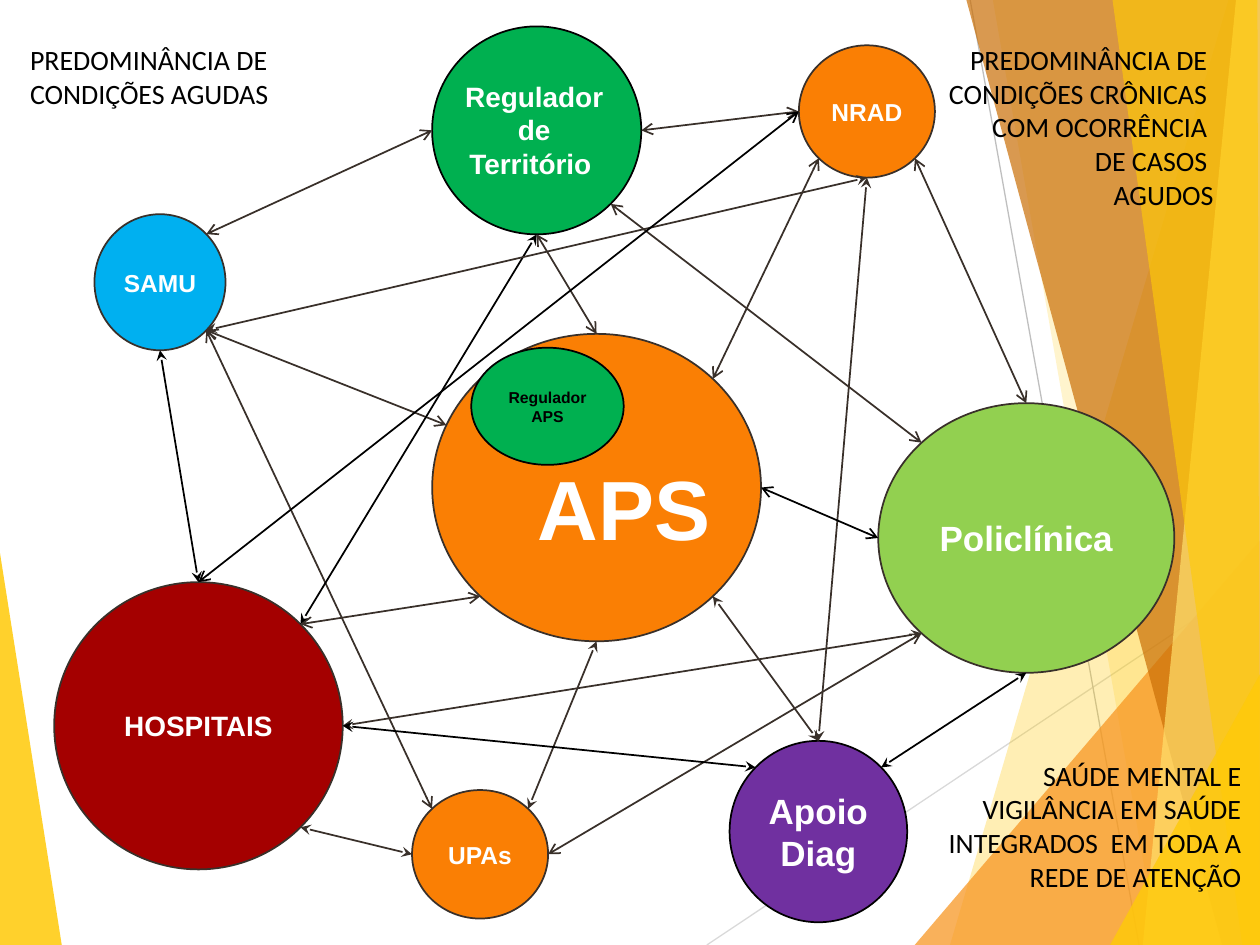
import math

import pptx
import pptx.dml.color
import pptx.enum.shapes
import pptx.enum.text
import pptx.oxml.ns
import pptx.util
from lxml import etree

SCALE = 9144
WIDTH, HEIGHT = 1000, 750
DARK, BLACK, WHITE = "39302A", "000000", "FFFFFF"
ORANGE, GREEN, GOLD = "FA7F04", "00B050", "FFCA08"
ALIGN = pptx.enum.text.PP_ALIGN
ANCHOR = pptx.enum.text.MSO_ANCHOR

SITES = {"E": 0, "SE": 45, "S": 90, "SW": 135, "W": 180, "WNW": 204, "NW": 225, "N": 270, "NE": 315}

LEFT_BAND = ([(0, 439), (49, 750), (0, 750)], GOLD, 85)
RIGHT_BANDS = [
    ([(975, 0), (754, 750), (1000, 750), (1000, 0)], GOLD, 30),
    ([(788, 0), (919, 750), (1000, 750), (1000, 0)], GOLD, 20),
    ([(726, 750), (1000, 429), (1000, 750)], "F8931D", 72),
    ([(767, 0), (970, 750), (1000, 750), (1000, 0)], "CA6F06", 70),
    ([(981, 0), (907, 750), (1000, 750), (1000, 0)], "FFDF6B", 70),
    ([(883, 0), (986, 750), (1000, 750), (998, 0)], GOLD, 65),
    ([(881, 750), (1000, 535), (1000, 750)], GOLD, 80),
]

NODES = {
    "SAMU": ((75, 170, 104, 108), "00B0F0", DARK, "SAMU", 14),
    "Território": ((343, 21, 166, 165), GREEN, BLACK, "", 16),
    "UPAs": ((327, 627, 108, 102), ORANGE, DARK, "UPAs", 14),
    "Hospitais": ((43, 462, 229, 228), "A40000", DARK, "HOSPITAIS", 16),
    "Apoio": ((579, 588, 141, 144), "7030A0", BLACK, "Apoio Diag", 20),
    "Policlínica": ((697, 320, 235, 214), "92D050", DARK, "Policlínica", 20),
    "NRAD": ((634, 36, 108, 105), ORANGE, DARK, "NRAD", 14),
    "APS": ((343, 265, 261, 244), ORANGE, DARK, "", 48),
}

LINKS = [
    ("UPAs", "NW", "SAMU", "SE", DARK, "arrow"),
    ("SAMU", "SE", "APS", "WNW", DARK, "arrow"),
    ("APS", "N", "Território", "S", DARK, "arrow"),
    ("Território", "E", "NRAD", "W", DARK, "arrow"),
    ("NRAD", "SW", "APS", "NE", DARK, "arrow"),
    ("NRAD", "SE", "Policlínica", "N", DARK, "arrow"),
    ("Território", "W", "SAMU", "NE", DARK, "arrow"),
    ("Território", "SE", "Policlínica", "NW", DARK, "arrow"),
    ("NRAD", "S", "Apoio", "N", DARK, "stealth"),
    ("APS", "S", "UPAs", "NE", DARK, "stealth"),
    ("Hospitais", "SE", "UPAs", "W", DARK, "stealth"),
    ("Hospitais", "E", "Policlínica", "SW", DARK, "stealth"),
    ("UPAs", "E", "Policlínica", "SW", DARK, "arrow"),
    ("Território", "S", "Hospitais", "NE", BLACK, "stealth"),
    ("SAMU", "S", "Hospitais", "N", BLACK, "stealth"),
    ("Hospitais", "NE", "APS", "SW", DARK, "arrow"),
    ("APS", "SE", "Apoio", "N", DARK, "stealth"),
    ("APS", "E", "Policlínica", "W", BLACK, "arrow"),
    ("NRAD", "S", "SAMU", "SE", DARK, "stealth"),
    ("NRAD", "W", "Hospitais", "N", BLACK, "arrow"),
    ("Hospitais", "E", "Apoio", "NW", BLACK, "stealth"),
    ("Policlínica", "S", "Apoio", "NE", BLACK, "stealth"),
]


def px(*lengths):
    """Turn lengths in px into EMU."""
    return [pptx.util.Emu(round(length * SCALE)) for length in lengths]


def color(hex_text):
    """Return the colour for a hex string."""
    return pptx.dml.color.RGBColor.from_string(hex_text)


def paint(shape, fill, line=None, opacity=100):
    """Set fill, opacity and outline of a shape and drop its shadow."""
    shape.shadow.inherit = False
    shape.fill.solid()
    shape.fill.fore_color.rgb = color(fill)
    if opacity < 100:
        tint = shape.fill._xPr.find(".//" + pptx.oxml.ns.qn("a:srgbClr"))
        etree.SubElement(tint, pptx.oxml.ns.qn("a:alpha"), val=str(opacity * 1000))
    if line:
        shape.line.color.rgb = color(line)
        shape.line.width = pptx.util.Pt(1)
    else:
        shape.line.fill.background()


def write(shape, text, size=16, font="Arial", ink=WHITE, bold=True, align=ALIGN.CENTER,
          anchor=ANCHOR.MIDDLE, insets=(7, 4), wrap=True):
    """Fill a shape with formatted paragraphs, one for each line of text."""
    frame = shape.text_frame
    frame.word_wrap = wrap
    frame.vertical_anchor = anchor
    frame.margin_left, frame.margin_top = frame.margin_right, frame.margin_bottom = px(*insets)
    frame.text = text
    for paragraph in frame.paragraphs:
        paragraph.alignment = align
        for run in paragraph.runs:
            run.font.size = pptx.util.Pt(size)
            run.font.name = font
            run.font.bold = bold
            run.font.color.rgb = color(ink)


def add_label(shapes, box, text, **text_format):
    """Place a text box that starts at its top."""
    label = shapes.add_textbox(*px(*box))
    write(label, text, anchor=ANCHOR.TOP, **text_format)
    return label


def add_caption(shapes, box, text, **text_format):
    """Place a plain caption whose box fits its text."""
    caption = add_label(shapes, box, text, font="Calibri", ink=BLACK, bold=False,
                        insets=(10, 5), **text_format)
    caption.text_frame.auto_size = pptx.enum.text.MSO_AUTO_SIZE.SHAPE_TO_FIT_TEXT


def add_node(shapes, box, fill, line, text, size, ink=WHITE):
    """Place an ellipse with its name."""
    node = shapes.add_shape(pptx.enum.shapes.MSO_SHAPE.OVAL, *px(*box))
    paint(node, fill, line)
    if text:
        write(node, text, size=size, ink=ink)


def add_line(shapes, start, end, ink, width=1, arrowhead=None):
    """Draw a straight line, with the same arrowhead at both ends if one is given."""
    line = shapes.add_connector(pptx.enum.shapes.MSO_CONNECTOR.STRAIGHT, *px(*start, *end))
    line.line.color.rgb = color(ink)
    line.line.width = pptx.util.Pt(width)
    if arrowhead:
        outline = line.line._get_or_add_ln()
        for tag in ("a:headEnd", "a:tailEnd"):
            etree.SubElement(outline, pptx.oxml.ns.qn(tag), type=arrowhead)
    etree.SubElement(line._element.spPr, pptx.oxml.ns.qn("a:effectLst"))


def add_band(shapes, points, fill, opacity):
    """Draw a translucent polygon."""
    builder = shapes.build_freeform(*points[0], scale=SCALE)
    builder.add_line_segments(points[1:], close=True)
    paint(builder.convert_to_shape(), fill, opacity=opacity)


def site(name, direction):
    """Return the point on a node's edge in a compass direction."""
    left, top, width, height = NODES[name][0]
    angle = math.radians(SITES[direction])
    return left + width / 2 * (1 + math.cos(angle)), top + height / 2 * (1 + math.sin(angle))


def add_backdrop(shapes):
    """Draw the bands and thin lines at the slide's edges."""
    add_band(shapes, *LEFT_BAND)
    add_line(shapes, (561, HEIGHT), (WIDTH, 457), "D9D9D9", 0.75)
    add_line(shapes, (770, 0), (904, HEIGHT), "BFBFBF", 0.75)
    for band in RIGHT_BANDS:
        add_band(shapes, *band)


def add_primary_care(shapes, left, top, node):
    """Group the central ellipse with its label and its inner regulator."""
    group = shapes.add_group_shape().shapes
    add_node(group, *node)
    add_label(group, (left + 70, top + 94, 165, 77), "APS", size=48, insets=(6, 3))
    add_node(group, (left + 31, top + 11, 121, 93), GREEN, BLACK, "Regulador APS", 9, BLACK)


def add_network(shapes):
    """Draw the care points and the links between them."""
    for name, node in NODES.items():
        left, top = node[0][:2]
        if name == "APS":
            add_primary_care(shapes, left, top, node)
        else:
            add_node(shapes, *node)
        if name == "Território":
            add_label(shapes, (left + 15, top + 39, 132, 57), "Regulador de Território ", insets=(6, 3))
    for origin, leaving, target, arriving, ink, arrowhead in LINKS:
        add_line(shapes, site(origin, leaving), site(target, arriving), ink, arrowhead=arrowhead)


def add_captions(shapes):
    """Place the three captions in the corners."""
    add_caption(shapes, (720, 29, 253, 145),
                "PREDOMINÂNCIA DE \nCONDIÇÕES CRÔNICAS \nCOM OCORRÊNCIA \nDE CASOS \nAGUDOS",
                align=ALIGN.RIGHT)
    add_caption(shapes, (14, 29, 212, 64), "PREDOMINÂNCIA DE\nCONDIÇÕES AGUDAS",
                align=ALIGN.LEFT, wrap=False)
    add_caption(shapes, (742, 597, 253, 118),
                "SAÚDE MENTAL E VIGILÂNCIA EM SAÚDE\nINTEGRADOS  EM TODA A REDE DE ATENÇÃO",
                align=ALIGN.RIGHT)


def main():
    """Build the slide and save it."""
    presentation = pptx.Presentation()
    presentation.slide_width, presentation.slide_height = px(WIDTH, HEIGHT)
    slide = presentation.slides.add_slide(presentation.slide_layouts[6])
    add_backdrop(slide.shapes)
    add_network(slide.shapes)
    add_captions(slide.shapes)
    presentation.save("out.pptx")


if __name__ == "__main__":
    main()
